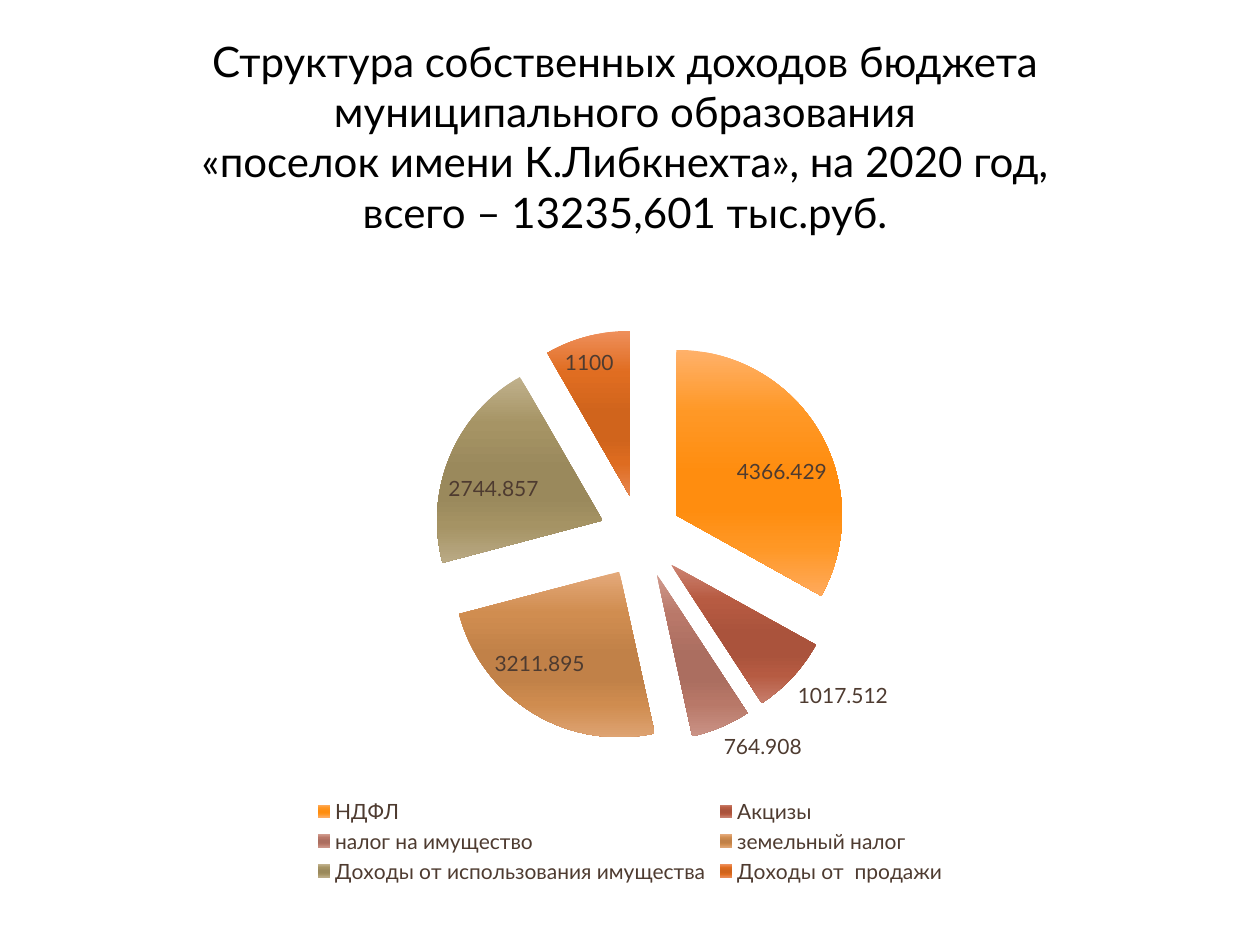
from lxml.etree import SubElement
from pptx import Presentation
from pptx.chart.data import CategoryChartData
from pptx.dml.color import RGBColor
from pptx.enum.chart import XL_CHART_TYPE as ChartType
from pptx.enum.chart import XL_LABEL_POSITION as LabelPosition
from pptx.enum.chart import XL_LEGEND_POSITION as LegendPosition
from pptx.enum.text import MSO_AUTO_SIZE as AutoSize
from pptx.enum.text import PP_ALIGN as Align
from pptx.oxml import parse_xml
from pptx.oxml.ns import nsdecls, qn
from pptx.util import Inches, Pt

FONT = "Lato"
BLACK = "000000"
BROWN = "4E3B30"
TITLE = [
    "Структура собственных доходов бюджета муниципального образования",
    "«поселок имени К.Либкнехта», на 2020 год,",
    "всего – 13235,601 тыс.руб.",
]
INCOME = {
    "НДФЛ": 4366.429,
    "Акцизы": 1017.512,
    "налог на имущество": 764.908,
    "земельный налог": 3211.895,
    "Доходы от использования имущества": 2744.857,
    "Доходы от  продажи": 1100,
}
STOP_POSITIONS = [0, 25, 50, 65, 80, 100]
SLICE_GRADIENTS = [
    ["FFB16A", "FF9826", "FF8D0F", "FF8D0F", "FF9724", "FFAA5C"],
    ["CD8473", "B75B42", "AA533C", "AA533C", "B65B42", "C77D6B"],
    ["D09A8D", "B97869", "AB6E60", "AB6E60", "B87868", "CA9386"],
    ["E4A97A", "D08D50", "C18148", "C18148", "CF8C4F", "DEA372"],
    ["C0B18C", "A69465", "9A895C", "9A895C", "A59364", "BAAA85"],
    ["EE8F5B", "E06D21", "D0641C", "D0641C", "DE6C20", "E88852"],
]
EXPLOSION = 25


def style_font(font, size, color):
    """Set the typeface, point size and hex colour of a font."""
    font.name = FONT
    font.size = Pt(size)
    font.color.rgb = RGBColor.from_string(color)


def add_title(slide, lines):
    """Add the centred title, one paragraph per line."""
    box = slide.shapes.add_textbox(
        Inches(0.39), Inches(0.23), Inches(9.14), Inches(1.72))
    frame = box.text_frame
    frame.word_wrap = True
    frame.auto_size = AutoSize.SHAPE_TO_FIT_TEXT
    frame.text = "\n".join(lines)
    for paragraph in frame.paragraphs:
        paragraph.alignment = Align.CENTER
        style_font(paragraph.font, 24, BLACK)


def fill_slice(point, colors):
    """Fill a pie slice with a vertical gradient and no outline."""
    point.format.line.fill.background()
    fill = point.format.fill
    fill.gradient()
    properties = point.format.fill._xPr
    stops = properties.find(qn("a:gradFill")).find(qn("a:gsLst"))
    for stop in list(stops):
        stops.remove(stop)
    for position, color in zip(STOP_POSITIONS, colors):
        stop = SubElement(stops, qn("a:gs"), pos=str(position * 1000))
        SubElement(stop, qn("a:srgbClr"), val=color)
    fill.gradient_angle = 270


def explode_slices(series, percent):
    """Pull every slice of a pie series away from the centre."""
    explosion = parse_xml(
        f'<c:explosion {nsdecls("c")} val="{percent}"/>')
    series._element.find(qn("c:tx")).addnext(explosion)


def add_income_chart(slide):
    """Add the exploded pie chart with value labels and a legend."""
    data = CategoryChartData()
    data.categories = list(INCOME)
    data.add_series("Series 1", list(INCOME.values()))
    chart = slide.shapes.add_chart(
        ChartType.PIE, Inches(0.37), Inches(2.25), Inches(9.26), Inches(4.8),
        data).chart
    style_font(chart.font, 10, BLACK)
    chart.has_title = False
    chart.has_legend = True
    chart.legend.position = LegendPosition.BOTTOM
    chart.legend.include_in_layout = False
    style_font(chart.legend.font, 12, BROWN)

    plot = chart.plots[0]
    plot.vary_by_categories = True
    series = plot.series[0]
    explode_slices(series, EXPLOSION)
    for index, colors in enumerate(SLICE_GRADIENTS):
        fill_slice(series.points[index], colors)

    labels = series.data_labels
    labels.show_value = True
    labels.position = LabelPosition.BEST_FIT
    style_font(labels.font, 12, BROWN)


def main():
    """Build the budget income slide and save it."""
    presentation = Presentation()
    presentation.slide_width = Inches(10)
    presentation.slide_height = Inches(7.5)
    slide = presentation.slides.add_slide(presentation.slide_layouts[6])
    add_income_chart(slide)
    add_title(slide, TITLE)
    presentation.save("out.pptx")


if __name__ == "__main__":
    main()
